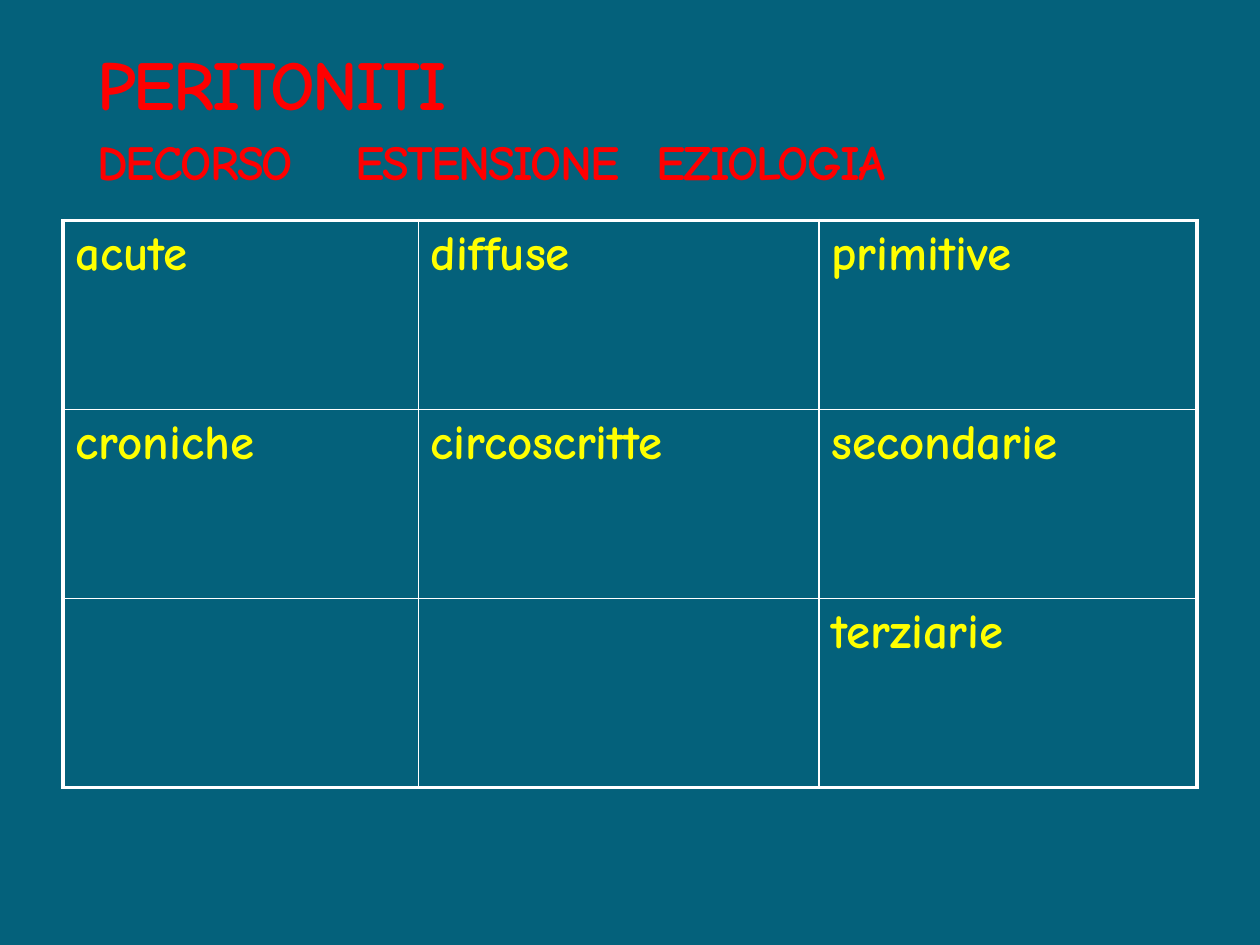
from dataclasses import dataclass

from lxml import etree
from pptx import Presentation
from pptx import util as u
from pptx.dml.color import RGBColor
from pptx.enum import text
from pptx.oxml.ns import qn

COLORS = {"background": "04617B", "heading": "FF0000", "entry": "FFFF00", "border": "FFFFFF"}
FONT = "Comic Neue"
OUTER, INNER = 2.25, 1
TAB_STOPS = (2.05, 4.44)
COLUMN_WIDTHS = (2.82, 3.18, 3)
ROW_HEIGHT = 1.5
ENTRIES = (
    ("acute", "diffuse", "primitive"),
    ("croniche", "circoscritte", "secondarie"),
    ("", "", "terziarie"),
)


@dataclass(frozen=True)
class HeadingRun:
    content: str
    size: int


HEADING_LINES = (
    (HeadingRun("PERITONITI", 40),),
    (HeadingRun("DECORSO\tESTENSIONE", 28), HeadingRun("\t", 32), HeadingRun("EZIOLOGIA", 28)),
)


def format_font(font, size: int, color: str) -> None:
    for name, value in {"name": FONT, "size": u.Pt(size), "bold": True}.items():
        setattr(font, name, value)
    font.color.rgb = RGBColor.from_string(COLORS[color])


def add_heading(slide) -> None:
    title = slide.shapes.title
    place = {"left": 0.67, "top": 0.3, "width": 8.33, "height": 1.25}
    for name, value in place.items():
        setattr(title, name, u.Inches(value))
    frame = title.text_frame
    frame_format = {
        "word_wrap": True,
        "auto_size": text.MSO_AUTO_SIZE.NONE,
        "vertical_anchor": text.MSO_ANCHOR.MIDDLE,
    }
    for name, value in frame_format.items():
        setattr(frame, name, value)
    paragraph = frame.paragraphs[0]
    paragraph.alignment = text.PP_ALIGN.LEFT
    tabs = etree.SubElement(paragraph._p.get_or_add_pPr(), qn("a:tabLst"))
    for stop in TAB_STOPS:
        etree.SubElement(tabs, qn("a:tab"), pos=str(u.Inches(stop)), algn="l")
    for index, line in enumerate(HEADING_LINES):
        if index:
            paragraph.add_line_break()
        for part in line:
            run = paragraph.add_run()
            run.text = part.content
            format_font(run.font, part.size, "heading")
            run.font._element.set("spc", "-100")


def add_border(cell, side: str, width: float) -> None:
    line = etree.Element(qn(f"a:ln{side}"), w=str(u.Pt(width)))
    fill = etree.SubElement(line, qn("a:solidFill"))
    etree.SubElement(fill, qn("a:srgbClr"), val=COLORS["border"])
    cell._tc.get_or_add_tcPr().append(line)


def add_entries(slide) -> None:
    rows, columns = len(ENTRIES), len(COLUMN_WIDTHS)
    table = slide.shapes.add_table(
        rows, columns, u.Inches(0.5), u.Inches(1.75),
        u.Inches(sum(COLUMN_WIDTHS)), u.Inches(rows * ROW_HEIGHT),
    ).table
    table.first_row = table.horz_banding = False
    for column, width in zip(table.columns, COLUMN_WIDTHS):
        column.width = u.Inches(width)
    for row_index, entries in enumerate(ENTRIES):
        table.rows[row_index].height = u.Inches(ROW_HEIGHT)
        for column_index, entry in enumerate(entries):
            cell = table.cell(row_index, column_index)
            outer_sides = {
                "L": column_index == 0,
                "R": column_index == columns - 1,
                "T": row_index == 0,
                "B": row_index == rows - 1,
            }
            for side, is_outer in outer_sides.items():
                add_border(cell, side, OUTER if is_outer else INNER)
            cell.fill.background()
            if entry:
                cell.text = entry
                format_font(cell.text_frame.paragraphs[0].runs[0].font, 28, "entry")


def main() -> None:
    presentation = Presentation()
    presentation.slide_width = u.Inches(10)
    presentation.slide_height = u.Inches(7.5)
    slide = presentation.slides.add_slide(presentation.slide_layouts[5])
    fill = slide.background.fill
    fill.solid()
    fill.fore_color.rgb = RGBColor.from_string(COLORS["background"])
    add_heading(slide)
    add_entries(slide)
    presentation.save("out.pptx")


if __name__ == "__main__":
    main()
